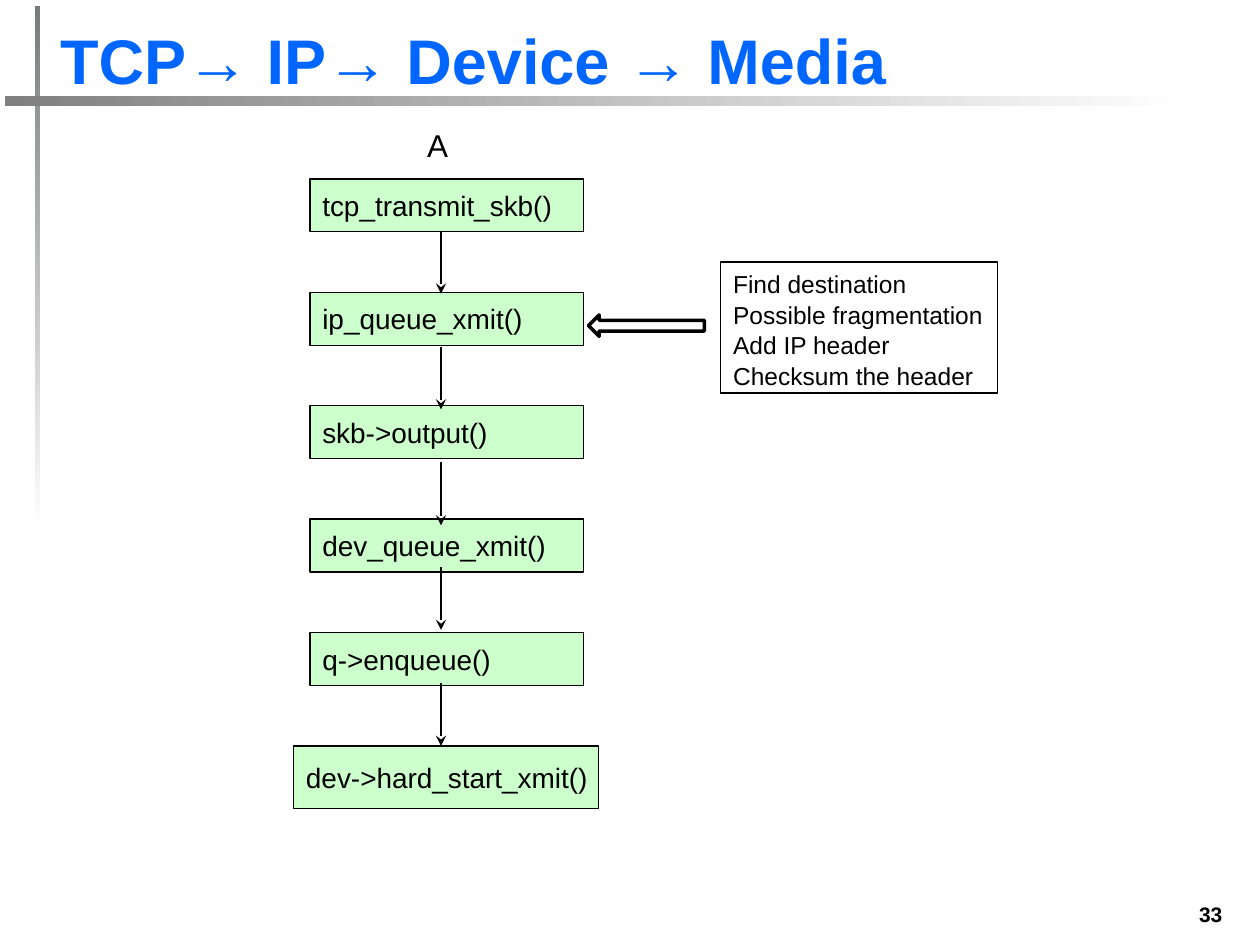
"""Build the slide on the transmit path from TCP down to the media."""
from typing import NamedTuple, Optional

from lxml import etree
from pptx import Presentation
from pptx.dml.color import RGBColor
from pptx.enum.shapes import MSO_CONNECTOR, MSO_SHAPE
from pptx.enum.text import MSO_ANCHOR, PP_ALIGN
from pptx.oxml.ns import qn
from pptx.util import Pt

RECT, LEFT_ARROW = MSO_SHAPE.RECTANGLE, MSO_SHAPE.LEFT_ARROW
STRAIGHT = MSO_CONNECTOR.STRAIGHT
TOP, MIDDLE, BOTTOM = MSO_ANCHOR.TOP, MSO_ANCHOR.MIDDLE, MSO_ANCHOR.BOTTOM
LEFT, RIGHT = PP_ALIGN.LEFT, PP_ALIGN.RIGHT

EMU_PER_PX = 9144
FONT = "Arial"
BLACK, WHITE, BLUE, GREEN = "000000", "FFFFFF", "0066FF", "CCFFCC"


class Box(NamedTuple):
    """A rectangle in px."""
    left: int
    top: int
    width: int
    height: int


class Style(NamedTuple):
    """The look of a text."""
    size: int
    color: str = BLACK
    bold: bool = False
    align: PP_ALIGN = LEFT
    anchor: MSO_ANCHOR = TOP
    spacing: float = 1.0


class Bar(NamedTuple):
    """A decorative bar that fades to white."""
    box: Box
    color: str
    angle: int


BARS = [
    Bar(Box(28, 5, 4, 417), "767D79", 270),
    Bar(Box(4, 76, 937, 8), "808080", 0),
]
CALLS = ["tcp_transmit_skb()", "ip_queue_xmit()", "skb->output()",
         "dev_queue_xmit()", "q->enqueue()"]
FIRST_CALL = Box(246, 142, 217, 42)
CALL_PITCH = 90
LAST_CALL = Box(233, 592, 242, 50)
ARROW_X, ARROW_LENGTH = 350, 50
ARROW_TOPS = [183, 275, 367, 450, 542]
NOTES = ["Find destination", "Possible fragmentation",
         "Add IP header", "Checksum the header"]


def px(n: int) -> int:
    """Turn px into EMU."""
    return n * EMU_PER_PX


def emu(box: Box) -> list[int]:
    """Turn a box into EMU lengths."""
    return [px(n) for n in box]


def rgb(color: str) -> RGBColor:
    """Turn a hex string into a colour."""
    return RGBColor.from_string(color)


def write(s, text: str, style: Style, wrap: bool = False) -> None:
    """Write one styled paragraph into a shape."""
    tf = s.text_frame
    tf.word_wrap = wrap
    tf.vertical_anchor = style.anchor
    p = tf.paragraphs[0]
    p.text = text
    p.alignment = style.align
    p.line_spacing = style.spacing
    p.font.name, p.font.size, p.font.bold = FONT, Pt(style.size), style.bold
    p.font.color.rgb = rgb(style.color)


def add_text(slide, box: Box, text: str, style: Style, inset: bool = True) -> None:
    """Add a text box, without margins and wrapping if not inset."""
    s = slide.shapes.add_textbox(*emu(box))
    write(s, text, style, wrap=inset)
    if not inset:
        tf = s.text_frame
        tf.margin_left = tf.margin_top = tf.margin_right = tf.margin_bottom = 0


def add_bar(slide, bar: Bar) -> None:
    """Add a bar with a gradient fill."""
    s = slide.shapes.add_shape(RECT, *emu(bar.box))
    s.shadow.inherit = False
    s.line.fill.background()
    s.fill.gradient()
    s.fill.gradient_angle = bar.angle
    for stop, color in zip(s.fill.gradient_stops, (bar.color, WHITE)):
        stop.color.rgb = rgb(color)


def add_outlined(slide, kind: MSO_SHAPE, box: Box, fill: Optional[str] = None,
                 width: float = 0.75):
    """Add a preset shape with a black outline."""
    s = slide.shapes.add_shape(kind, *emu(box))
    s.shadow.inherit = False
    if fill:
        s.fill.solid()
        s.fill.fore_color.rgb = rgb(fill)
    else:
        s.fill.background()
    s.line.color.rgb = rgb(BLACK)
    s.line.width = Pt(width)
    return s


def add_call(slide, box: Box, text: str) -> None:
    """Add a function call box."""
    write(add_outlined(slide, RECT, box, GREEN), text, Style(16, anchor=MIDDLE))


def add_down_arrow(slide, top: int) -> None:
    """Add an arrow that leads to the next call."""
    s = slide.shapes.add_connector(STRAIGHT, px(ARROW_X), px(top),
                                   px(ARROW_X), px(top + ARROW_LENGTH))
    s.line.color.rgb = rgb(BLACK)
    s.line.width = Pt(1)
    properties = s.element.spPr
    etree.SubElement(properties.find(qn("a:ln")), qn("a:tailEnd"), type="stealth")
    etree.SubElement(properties, qn("a:effectLst"))


def main() -> None:
    """Build and save the slide."""
    prs = Presentation()
    prs.slide_width, prs.slide_height = px(1000), px(750)
    slide = prs.slides.add_slide(prs.slide_layouts[6])

    add_text(slide, Box(917, 711, 63, 30), "33", Style(12, bold=True, align=RIGHT))
    for bar in BARS:
        add_bar(slide, bar)
    add_text(slide, Box(38, 0, 850, 82), "TCP→ IP→ Device → Media",
             Style(36, BLUE, bold=True, anchor=BOTTOM))
    add_text(slide, Box(339, 100, 18, 30), "A", Style(18), inset=False)

    for i, call in enumerate(CALLS):
        add_call(slide, FIRST_CALL._replace(top=FIRST_CALL.top + i * CALL_PITCH), call)
    add_call(slide, LAST_CALL, "dev->hard_start_xmit()")
    for top in ARROW_TOPS:
        add_down_arrow(slide, top)

    s = add_outlined(slide, RECT, Box(572, 208, 220, 104))
    write(s, "\n".join(NOTES), Style(14, spacing=1.04))
    add_outlined(slide, LEFT_ARROW, Box(467, 250, 92, 17), width=2)

    prs.save("out.pptx")


if __name__ == "__main__":
    main()
